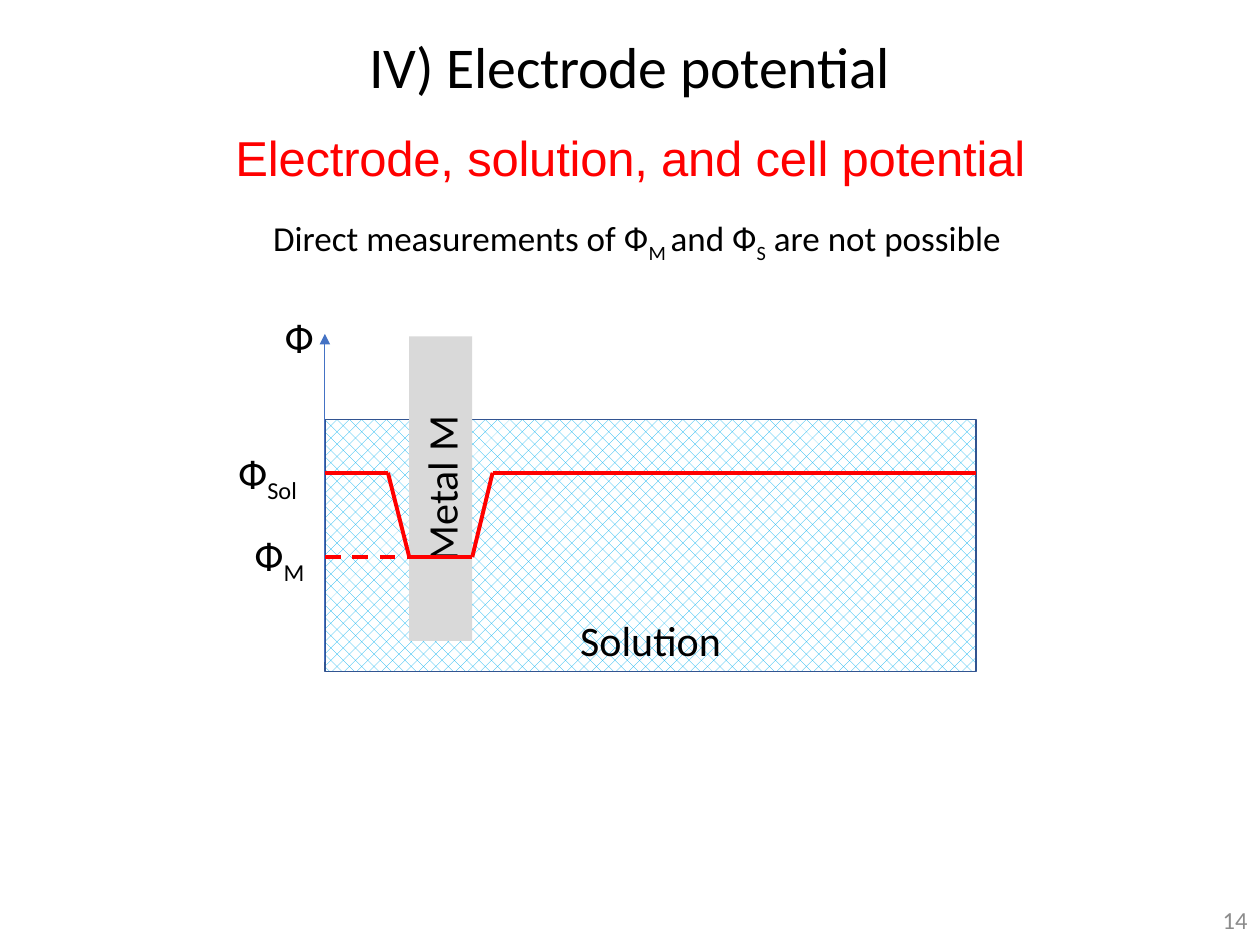
from lxml.etree import SubElement
from pptx import Presentation
from pptx.dml.color import RGBColor
from pptx.enum.dml import MSO_LINE, MSO_PATTERN
from pptx.enum.shapes import MSO_CONNECTOR, MSO_SHAPE
from pptx.enum.text import MSO_ANCHOR, PP_ALIGN
from pptx.oxml.ns import qn
from pptx.util import Cm, Pt

BLACK = RGBColor(0x00, 0x00, 0x00)
WHITE = RGBColor(0xFF, 0xFF, 0xFF)
RED = RGBColor(0xFF, 0x00, 0x00)
CYAN = RGBColor(0x00, 0xB0, 0xF0)
NAVY = RGBColor(0x32, 0x54, 0x91)
BLUE = RGBColor(0x44, 0x72, 0xC4)
SILVER = RGBColor(0xD9, 0xD9, 0xD9)
GRAY = RGBColor(0x8C, 0x8C, 0x8C)

LEFT, MID, RIGHT = PP_ALIGN.LEFT, PP_ALIGN.CENTER, PP_ALIGN.RIGHT


def write(shape, parts, size, align, color=BLACK, font="Calibri", flush=False):
    frame = shape.text_frame
    frame.word_wrap = True
    if flush:
        frame.margin_left = frame.margin_right = frame.margin_bottom = 0
        frame.margin_top = Cm(0.03)
    para = frame.paragraphs[0]
    para.alignment = align
    if flush:
        para.space_before = Pt(1)
    for text, low in parts:
        run = para.add_run()
        run.text = text
        run.font.size = Pt(size)
        run.font.name = font
        run.font.color.rgb = color
        if low:
            run._r.get_or_add_rPr().set("baseline", "-25000")
        if flush:
            run._r.get_or_add_rPr().set("spc", "-10")
    return frame


def draw(start, end, color, width):
    line = shapes.add_connector(MSO_CONNECTOR.STRAIGHT, Cm(start[0]), Cm(start[1]), Cm(end[0]), Cm(end[1]))
    line.line.color.rgb = color
    line.line.width = Pt(width)
    SubElement(line._element.spPr, qn("a:effectLst"))
    return line


deck = Presentation()
deck.slide_width, deck.slide_height = Cm(25.4), Cm(19.05)
slide = deck.slides.add_slide(deck.slide_layouts[6])
shapes = slide.shapes

title = shapes.add_textbox(Cm(2.54), Cm(0.58), Cm(20.32), Cm(1.45))
frame = write(title, [("IV) Electrode potential", False)], 33, MID, flush=True)
frame.vertical_anchor = MSO_ANCHOR.MIDDLE

topic = shapes.add_textbox(Cm(0.64), Cm(2.54), Cm(24.13), Cm(1.22))
write(topic, [("Electrode, solution, and cell potential", False)], 28, MID, RED, "Arial", True)

bath = shapes.add_shape(MSO_SHAPE.RECTANGLE, Cm(6.55), Cm(8.46), Cm(13.13), Cm(5.08))
bath.shadow.inherit = False
bath.fill.patterned()
bath.fill.pattern = MSO_PATTERN.PERCENT_30
bath.fill.fore_color.rgb = CYAN
bath.fill.back_color.rgb = WHITE
bath.line.color.rgb = NAVY
bath.line.width = Pt(1)

metal = shapes.add_shape(MSO_SHAPE.RECTANGLE, Cm(8.25), Cm(6.78), Cm(1.27), Cm(6.14))
metal.shadow.inherit = False
metal.fill.solid()
metal.fill.fore_color.rgb = SILVER
metal.line.fill.background()
frame = write(metal, [("Metal M", False)], 24, MID)
frame.vertical_anchor = MSO_ANCHOR.MIDDLE
frame._txBody.bodyPr.set("vert", "vert270")

axis = draw((6.55, 13.34), (6.55, 6.73), BLUE, 0.5)
SubElement(axis.line._get_or_add_ln(), qn("a:tailEnd"), type="triangle")

labels = [
    (6.55, 12.27, 13.13, 24, MID, [("Solution", False)]),
    (5.49, 6.15, 1.7, 24, LEFT, [("Ф", False)]),
    (4.88, 10.54, 1.7, 24, LEFT, [("Ф", False), ("M", True)]),
    (4.55, 8.89, 2.01, 24, LEFT, [("Ф", False), ("Sol", True)]),
    (4.85, 4.24, 15.98, 20, MID, [
        ("Direct measurements of Ф", False), ("M ", True), ("and Ф", False),
        ("S", True), (" are not possible", False)]),
]
for left, top, width, size, align, parts in labels:
    label = shapes.add_textbox(Cm(left), Cm(top), Cm(width), Cm(1.27))
    write(label, parts, size, align)

high, low = 9.53, 11.23
curve = [(6.55, high), (7.82, high), (8.25, low), (9.52, low), (9.93, high), (19.68, high)]
for start, end in zip(curve, curve[1:]):
    draw(start, end, RED, 2.25)
level = draw((6.55, low), (8.25, low), RED, 2.25)
level.line.dash_style = MSO_LINE.DASH

number = shapes.add_textbox(Cm(19.69), Cm(18.03), Cm(5.71), Cm(1.02))
frame = write(number, [("14", False)], 14, RIGHT, GRAY)
frame.vertical_anchor = MSO_ANCHOR.MIDDLE

deck.save("out.pptx")
